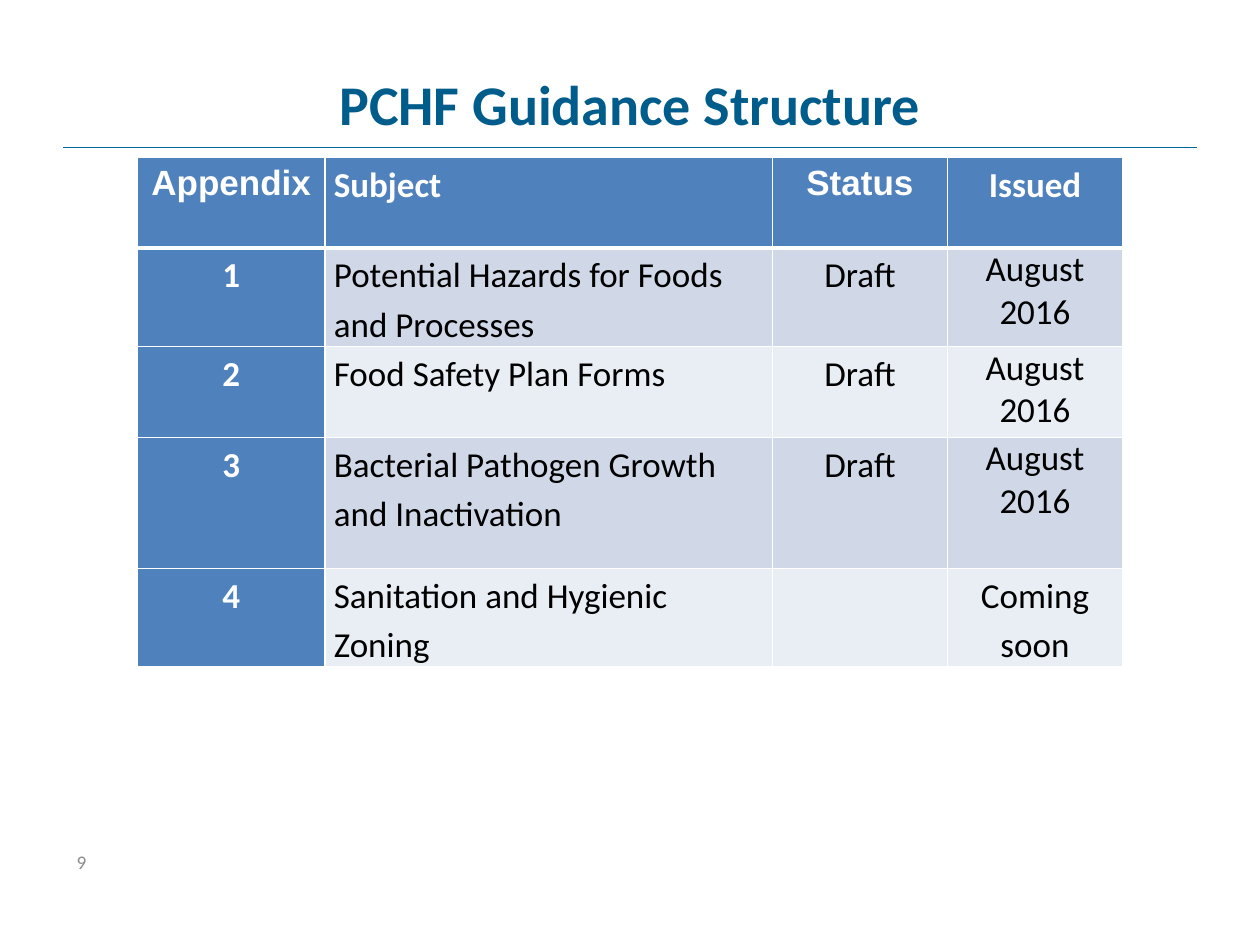
import pptx
import pptx.dml.color
import pptx.enum.shapes
import pptx.enum.text
import pptx.oxml
import pptx.oxml.ns
import pptx.oxml.xmlchemy
import pptx.util
from pptx.util import Inches

COLORS = {
    "title": "005C8A",
    "rule": "006699",
    "header": "4F81BD",
    "odd row": "D0D8E8",
    "even row": "E9EDF4",
    "white": "FFFFFF",
    "black": "000000",
    "number": "8C8C8C",
}
ALIGN = pptx.enum.text.PP_ALIGN
COLUMN_WIDTHS = [1.49, 3.55, 1.39, 1.39]
ROW_HEIGHTS = [0.72, 0.72, 0.72, 1.04, 0.72]
APPENDICES = [
    ["Appendix", "Subject", "Status", "Issued"],
    ["1", "Potential Hazards for Foods and Processes", "Draft", "August 2016"],
    ["2", "Food Safety Plan Forms", "Draft", "August 2016"],
    ["3", "Bacterial Pathogen Growth and Inactivation", "Draft", "August 2016"],
    ["4", "Sanitation and Hygienic Zoning", "", "Coming soon"],
]


def rgb(name):
    return pptx.dml.color.RGBColor.from_string(COLORS[name])


class SlideBuilder:
    def __init__(self, slide, font_name="Calibri"):
        self.slide = slide
        self.font_name = font_name

    def format_paragraph(self, paragraph, size, color, bold=False, align=ALIGN.LEFT, font_name=None):
        paragraph.alignment = align
        font = paragraph.font
        font.name = font_name or self.font_name
        font.size = pptx.util.Pt(size)
        font.bold = bold
        font.color.rgb = rgb(color)

    def add_title(self, text, left, top, width, height):
        title = self.slide.shapes.title
        title.left, title.top = Inches(left), Inches(top)
        title.width, title.height = Inches(width), Inches(height)
        frame = title.text_frame
        frame.text = text
        frame.vertical_anchor = pptx.enum.text.MSO_ANCHOR.MIDDLE
        self.format_paragraph(frame.paragraphs[0], 32, "title", True, ALIGN.CENTER)

    def add_rule(self, left, right, y):
        rule = self.slide.shapes.add_connector(
            pptx.enum.shapes.MSO_CONNECTOR.STRAIGHT,
            Inches(left), Inches(y), Inches(right), Inches(y))
        rule.line.color.rgb = rgb("rule")
        rule.line.width = pptx.util.Pt(0.75)
        rule._element.spPr.append(pptx.oxml.xmlchemy.OxmlElement("a:effectLst"))

    def add_text(self, text, left, top, width, height, size, color):
        box = self.slide.shapes.add_textbox(Inches(left), Inches(top), Inches(width), Inches(height))
        box.text_frame.word_wrap = True
        box.text_frame.text = text
        self.format_paragraph(box.text_frame.paragraphs[0], size, color)

    def set_borders(self, cell, **widths):
        """Draw white cell borders; widths are points by side: L, R, T, B."""
        properties = cell._tc.get_or_add_tcPr()
        for side, width in widths.items():
            properties.append(pptx.oxml.parse_xml(
                f'<a:ln{side} {pptx.oxml.ns.nsdecls("a")} w="{pptx.util.Pt(width)}">'
                f'<a:solidFill><a:srgbClr val="{COLORS["white"]}"/></a:solidFill></a:ln{side}>'))

    def format_cell(self, cell, row, column):
        is_header = row == 0
        is_heading = is_header or column == 0
        self.set_borders(cell, L=1, R=1, T=3 if row == 1 else 1, B=3 if is_header else 1)
        stripe = "odd row" if row % 2 else "even row"
        cell.fill.solid()
        cell.fill.fore_color.rgb = rgb("header" if is_heading else stripe)
        cell.margin_left = cell.margin_right = Inches(0.07)
        cell.margin_top = cell.margin_bottom = 0
        paragraph = cell.text_frame.paragraphs[0]
        is_date = column == 3 and 1 <= row <= 3
        paragraph.line_spacing = 1.0 if is_date else 1.15
        self.format_paragraph(
            paragraph, 20, "white" if is_heading else "black", is_heading,
            ALIGN.LEFT if column == 1 else ALIGN.CENTER,
            "Arial" if is_header and column in (0, 2) else None)

    def add_table(self, rows, left, top, column_widths, row_heights):
        table = self.slide.shapes.add_table(
            len(rows), len(column_widths), Inches(left), Inches(top),
            Inches(sum(column_widths)), Inches(sum(row_heights))).table
        for column, width in zip(table.columns, column_widths):
            column.width = Inches(width)
        for row, height in zip(table.rows, row_heights):
            row.height = Inches(height)
        for row_index, texts in enumerate(rows):
            for column_index, text in enumerate(texts):
                cell = table.cell(row_index, column_index)
                cell.text = text
                self.format_cell(cell, row_index, column_index)


def main():
    presentation = pptx.Presentation()
    presentation.slide_width = Inches(10)
    presentation.slide_height = Inches(7.5)
    title_only = presentation.slide_layouts[5]
    builder = SlideBuilder(presentation.slides.add_slide(title_only))
    builder.add_rule(0.5, 9.5, 1.17)
    builder.add_title("PCHF Guidance Structure", 0.5, 0.3, 9, 1.03)
    builder.add_table(APPENDICES, 1.09, 1.25, COLUMN_WIDTHS, ROW_HEIGHTS)
    builder.add_text("9", 0.51, 6.7, 2.33, 0.4, 11, "number")
    presentation.save("out.pptx")


if __name__ == "__main__":
    main()
